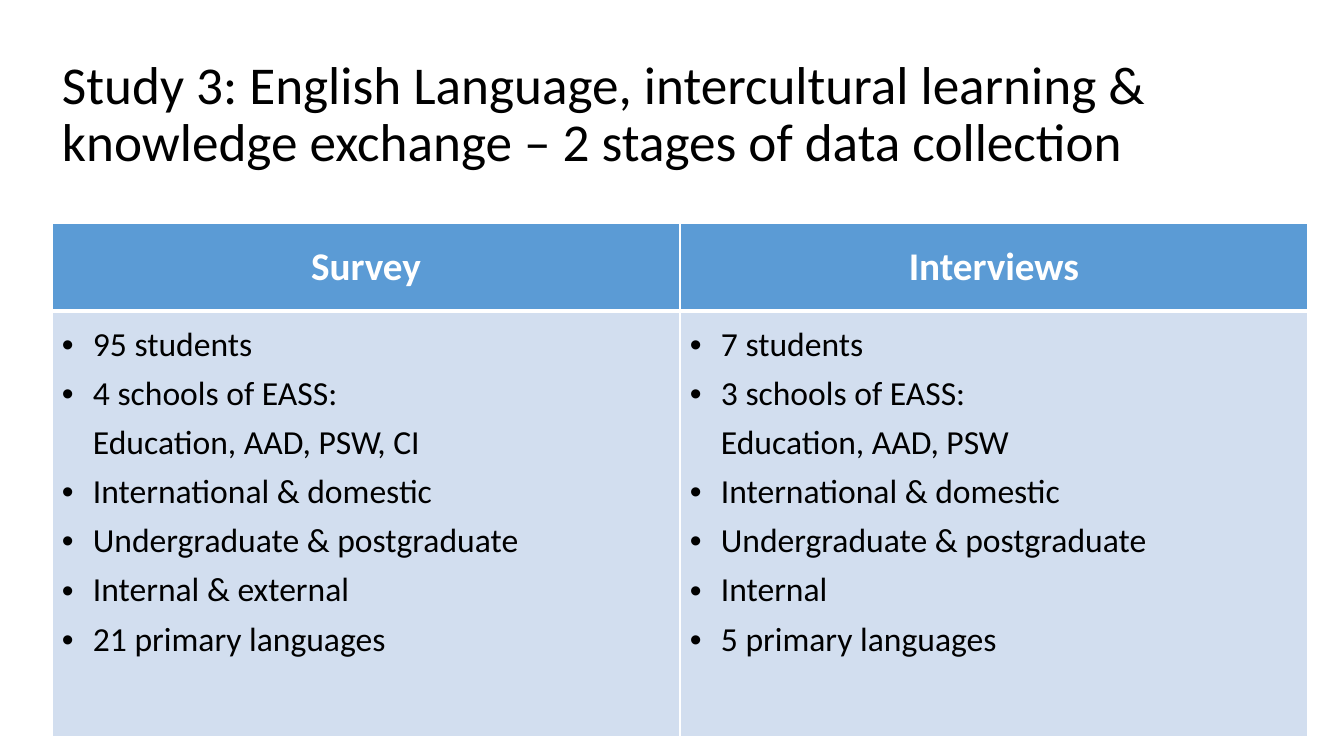
from lxml import etree
from pptx import Presentation
from pptx.dml.color import RGBColor
from pptx.enum.text import MSO_ANCHOR, PP_ALIGN
from pptx.oxml.ns import qn
from pptx.util import Pt

MID, TOP = MSO_ANCHOR.MIDDLE, MSO_ANCHOR.TOP
LEFT, MID_X = PP_ALIGN.LEFT, PP_ALIGN.CENTER
PX = 914400 / 100.8
FACE = "Calibri"
BLACK, WHITE, BLUE, PALE = "000000", "FFFFFF", "5B9BD5", "D2DEEF"

TITLE = ("Study 3: English Language, intercultural learning & "
         "knowledge exchange – 2 stages of data collection")
STAGES = {
    "Survey": ["95 students", "4 schools of EASS: \nEducation, AAD, PSW, CI",
               "International & domestic", "Undergraduate & postgraduate",
               "Internal & external", "21 primary languages"],
    "Interviews": ["7 students", "3 schools of EASS: \nEducation, AAD, PSW",
                   "International & domestic", "Undergraduate & postgraduate",
                   "Internal", "5 primary languages"],
}


def px(n):
    return round(n * PX)


def tint(code):
    return RGBColor.from_string(code)


def put(item, values):
    for name, value in values.items():
        setattr(item, name, value)


HEAD = {"fill": BLUE, "font": {"size": Pt(28), "bold": True}, "color": WHITE,
        "para": {"alignment": MID_X}, "bullet": False,
        "cell": {"vertical_anchor": MID, "margin_left": px(7), "margin_right": px(7),
                 "margin_top": px(4), "margin_bottom": px(4)},
        "edges": {"L": 1, "R": 1, "T": 1, "B": 3}}
BODY = {"fill": PALE, "font": {"size": Pt(24), "bold": False}, "color": BLACK,
        "para": {"alignment": LEFT, "line_spacing": 1.2}, "bullet": True,
        "cell": {"vertical_anchor": TOP, "margin_left": px(10), "margin_right": px(10),
                 "margin_top": px(5), "margin_bottom": px(5)},
        "edges": {"L": 1, "R": 1, "T": 3, "B": 1}}


class Deck:
    """Holds the typeface and current slide, and adds elements to it."""

    def __init__(self, wide, high, face):
        self.show = Presentation()
        put(self.show, {"slide_width": px(wide), "slide_height": px(high)})
        self.slide = self.show.slides.add_slide(self.show.slide_layouts[6])
        self.face = face

    def lines(self, frame, lines, font, color, para, bullet=False):
        for i, line in enumerate(lines):
            item = frame.paragraphs[0] if i == 0 else frame.add_paragraph()
            item.text = line
            put(item, para)
            for run in item.runs:
                put(run.font, {"name": self.face, **font})
                run.font.color.rgb = tint(color)
            if bullet:
                self.mark(item)

    def mark(self, item):
        props = item._p.get_or_add_pPr()
        props.set("marL", str(px(31)))
        props.set("indent", str(-px(31)))
        etree.SubElement(props, qn("a:buFont"), typeface="Arial")
        etree.SubElement(props, qn("a:buChar"), char="•")

    def text(self, box, lines, font, color, para):
        frame = self.slide.shapes.add_textbox(*map(px, box)).text_frame
        put(frame, {"word_wrap": True, "vertical_anchor": MID})
        self.lines(frame, lines, font, color, para)

    def edge(self, cell, widths):
        props = cell._tc.get_or_add_tcPr()
        for i, (side, width) in enumerate(widths.items()):
            line = etree.Element(qn(f"a:ln{side}"), w=str(Pt(width)))
            fill = etree.SubElement(line, qn("a:solidFill"))
            etree.SubElement(fill, qn("a:srgbClr"), val=WHITE)
            props.insert(i, line)

    def cell(self, cell, lines, look):
        put(cell, look["cell"])
        cell.fill.solid()
        cell.fill.fore_color.rgb = tint(look["fill"])
        self.edge(cell, look["edges"])
        self.lines(cell.text_frame, lines, look["font"], look["color"],
                   look["para"], look["bullet"])

    def table(self, box, highs, data):
        grid = self.slide.shapes.add_table(len(highs), len(data), *map(px, box)).table
        for row, high in zip(grid.rows, highs):
            row.height = px(high)
        for col, (head, lines) in enumerate(data.items()):
            grid.columns[col].width = px(box[2] / len(data))
            self.cell(grid.cell(0, col), [head], HEAD)
            self.cell(grid.cell(1, col), lines, BODY)


def main():
    deck = Deck(1344, 756, FACE)
    deck.text((52, 19, 1256, 193), [TITLE], {"size": Pt(38)}, BLACK,
              {"line_spacing": 0.9, "space_before": Pt(6)})
    deck.table((52, 223, 1256, 514), (88, 426), STAGES)
    deck.show.save("out.pptx")


if __name__ == "__main__":
    main()
